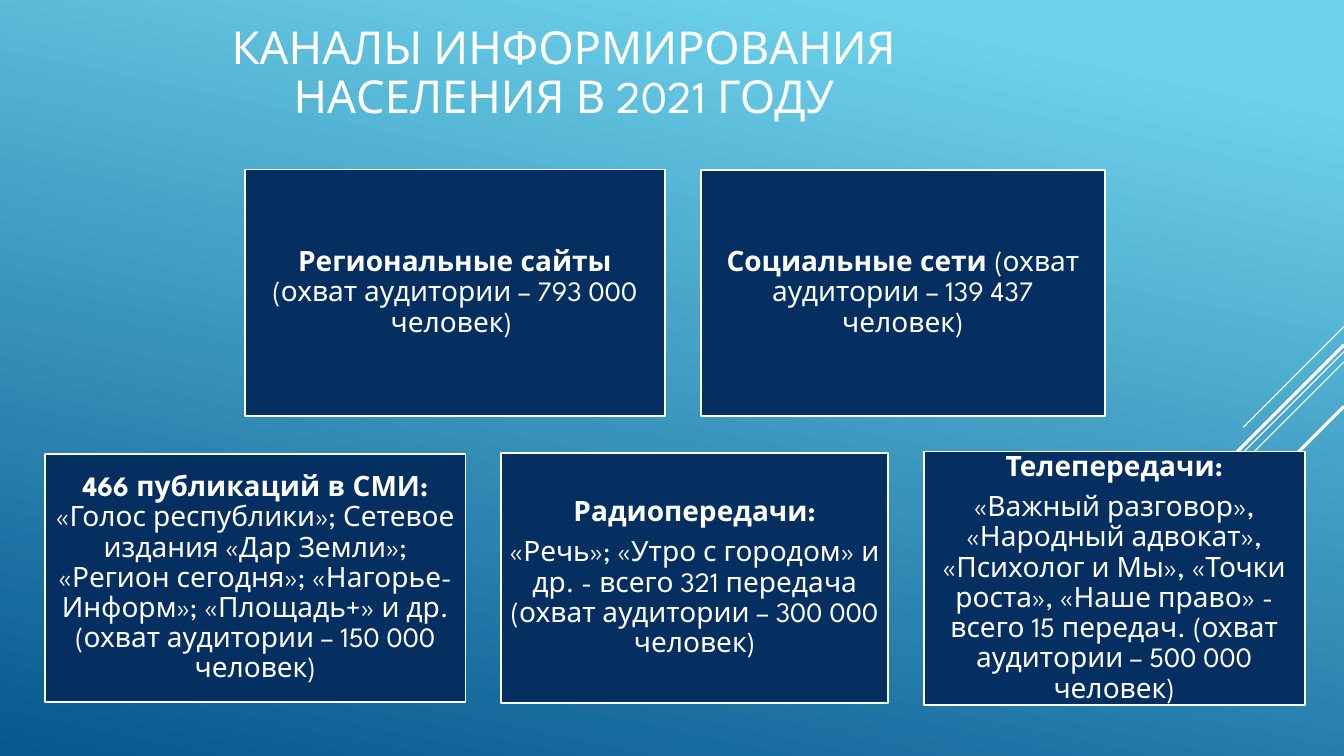
from lxml import etree
from pptx import Presentation, util as u
from pptx.dml.color import RGBColor
from pptx.enum import shapes, text
from pptx.oxml.ns import qn

COLORS = {"white": "FFFFFF", "navy": "052F61", "sky": "6ED2EB", "sea": "06588E"}
FONT = "League Spartan"
SLIDE_WIDTH, SLIDE_HEIGHT = 33.87, 19.05
GAP = 0.9

heading = "КАНАЛЫ ИНФОРМИРОВАНИЯ НАСЕЛЕНИЯ В 2021 ГОДУ"

channel_rows = [
    {"left": 6.17, "middle": 7.38, "channels": [
        (10.59, 6.22, [[("Региональные сайты ", True),
                        ("(охват аудитории – 793 000 человек) ", False)]]),
        (10.19, 6.2, [[("Социальные сети ", True),
                       ("(охват аудитории – 139 437 человек)", False)]]),
    ]},
    {"left": 1.14, "middle": 14.57, "channels": [
        (10.59, 6.25, [[("466 публикаций в СМИ: ", True),
                        ("«Голос республики»; Сетевое издания «Дар Земли»; "
                         "«Регион сегодня»; «Нагорье-Информ»; «Площадь+» и др. "
                         "(охват аудитории – 150 000 человек)", False)]]),
        (9.75, 6.3, [[("Радиопередачи:", True)],
                     [("«Речь»; «Утро с городом» и др. - всего 321 передача "
                       "(охват аудитории – 300 000 человек)", False)]]),
        (9.6, 6.38, [[("Телепередачи:", True)],
                     [("«Важный разговор», «Народный адвокат», «Психолог и Мы», "
                       "«Точки роста», «Наше право» - всего 15 передач. "
                       "(охват аудитории – 500 000 человек)", False)]]),
    ]},
]

diagonals = [(8.23, 2.54, 0.75), (8.86, 8.28, 0.75), (9.12, 5.27, 0.75),
             (8.69, 4.85, 2.25), (10.24, 3.53, 2.25)]


def color(name):
    return RGBColor.from_string(COLORS[name])


def write(frame, paragraphs, size=20, after=7, inset=0.2):
    frame.word_wrap = True
    frame.auto_size = text.MSO_AUTO_SIZE.NONE
    frame.vertical_anchor = text.MSO_ANCHOR.MIDDLE
    frame.margin_left = frame.margin_right = u.Cm(inset)
    frame.margin_top = frame.margin_bottom = u.Cm(inset)
    for index, runs in enumerate(paragraphs):
        paragraph = frame.add_paragraph() if index else frame.paragraphs[0]
        paragraph.alignment = text.PP_ALIGN.CENTER
        paragraph.line_spacing = 0.9
        paragraph.space_after = u.Pt(after)
        for words, bold in runs:
            run = paragraph.add_run()
            run.text = words
            run.font.name = FONT
            run.font.size = u.Pt(size)
            run.font.bold = bold
            run.font.color.rgb = color("white")


def add_diagonal(slide, top, length, weight):
    diagonal = slide.shapes.add_connector(
        shapes.MSO_CONNECTOR.STRAIGHT, u.Cm(SLIDE_WIDTH), u.Cm(top),
        u.Cm(SLIDE_WIDTH - length), u.Cm(top + length))
    diagonal.line.color.rgb = color("white")
    diagonal.line.width = u.Pt(weight)
    etree.SubElement(diagonal._element.spPr, qn("a:effectLst"))


def add_channel(slide, left, middle, width, height, paragraphs):
    channel = slide.shapes.add_shape(
        shapes.MSO_SHAPE.RECTANGLE, u.Cm(left), u.Cm(middle - height / 2),
        u.Cm(width), u.Cm(height))
    channel.shadow.inherit = False
    channel.fill.solid()
    channel.fill.fore_color.rgb = color("navy")
    channel.line.color.rgb = color("white")
    channel.line.width = u.Pt(1.25)
    write(channel.text_frame, paragraphs)


def main():
    deck = Presentation()
    deck.slide_width, deck.slide_height = u.Cm(SLIDE_WIDTH), u.Cm(SLIDE_HEIGHT)
    slide = deck.slides.add_slide(deck.slide_layouts[5])

    backdrop = slide.background.fill
    backdrop.gradient()
    backdrop.gradient_angle = 258
    for stop, (name, position) in zip(backdrop.gradient_stops,
                                      [("sky", 0.1), ("sea", 1)]):
        stop.color.rgb = color(name)
        stop.position = position

    title = slide.shapes.title
    title.left, title.top = u.Cm(2.36), u.Cm(0.41)
    title.width, title.height = u.Cm(23.7), u.Cm(2.9)
    write(title.text_frame, [[(heading, False)]], size=32.4, after=0, inset=0.25)

    for top, length, weight in diagonals:
        add_diagonal(slide, top, length, weight)

    for row in channel_rows:
        left = row["left"]
        for width, height, paragraphs in row["channels"]:
            add_channel(slide, left, row["middle"], width, height, paragraphs)
            left += width + GAP

    deck.save("out.pptx")


if __name__ == "__main__":
    main()
